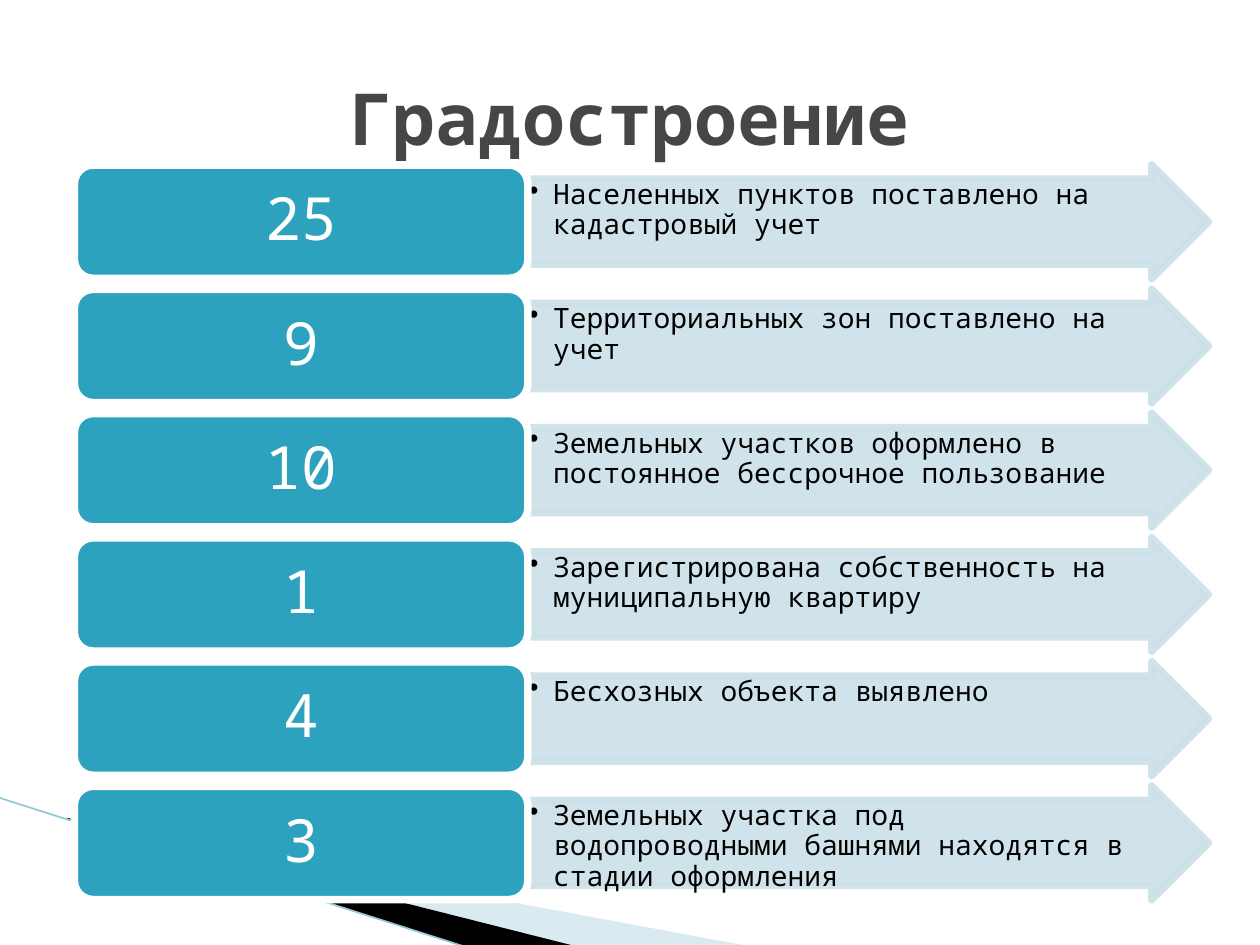
from lxml import etree
from pptx import Presentation
from pptx.dml.color import RGBColor
from pptx.enum.shapes import MSO_CONNECTOR, MSO_SHAPE
from pptx.enum.text import MSO_ANCHOR, PP_ALIGN
from pptx.oxml.ns import qn
from pptx.util import Inches, Pt

ARROW = MSO_SHAPE.RIGHT_ARROW
CARD = MSO_SHAPE.ROUNDED_RECTANGLE
LINE = MSO_CONNECTOR.STRAIGHT
TOP, MIDDLE = MSO_ANCHOR.TOP, MSO_ANCHOR.MIDDLE
LEFT, CENTER = PP_ALIGN.LEFT, PP_ALIGN.CENTER

COLS, ROWS = 100, 75
FIRST, STEP, HIGH = 13.1, 9.86, 9
FACTS = [
    ("25", "Населенных пунктов поставлено на кадастровый учет"),
    ("9", "Территориальных зон поставлено на учет"),
    ("10", "Земельных участков оформлено в постоянное бессрочное пользование"),
    ("1", "Зарегистрирована собственность на муниципальную квартиру"),
    ("4", "Бесхозных объекта выявлено"),
    ("3", "Земельных участка под водопроводными башнями находятся в стадии оформления"),
]


def rgb(code):
    return RGBColor.from_string(code)


def fade(parent, share):
    """Make the solid fill inside a shape's or line's XML opaque by a percentage."""
    color = parent.find(qn("a:solidFill"))[0]
    etree.SubElement(color, qn("a:alpha"), val=str(share * 1000))


class Board:
    """Style and current slide; lengths are columns and rows of the grid."""

    font = "Noto Sans Mono"
    teal, pale, white = "2DA2BF", "CDE0E8", "FFFFFF"
    black, gray = "000000", "464646"
    edge = 4.33

    def __init__(self, deck):
        self.slide = deck.slides.add_slide(deck.slide_layouts[6])
        self.shapes = self.slide.shapes
        self.col = deck.slide_width / COLS
        self.row = deck.slide_height / ROWS

    def spot(self, x, y):
        return round(x * self.col), round(y * self.row)

    def label(self, shape, text, size, color, align=CENTER, anchor=MIDDLE, bold=False):
        frame = shape.text_frame
        frame.text = text
        frame.word_wrap = True
        frame.vertical_anchor = anchor
        para = frame.paragraphs[0]
        para.alignment = align
        font = para.runs[0].font
        font.name, font.size, font.bold = self.font, Pt(size), bold
        font.color.rgb = rgb(color)
        return para

    def inset(self, shape, left, top, right, bottom):
        frame = shape.text_frame
        frame.margin_left, frame.margin_top = Inches(left), Inches(top)
        frame.margin_right, frame.margin_bottom = Inches(right), Inches(bottom)

    def title(self, text, x, y, w, h):
        box = self.shapes.add_textbox(*self.spot(x, y), *self.spot(w, h))
        self.label(box, text, 41, self.gray, bold=True)

    def block(self, kind, x, y, w, h, fill, edge):
        shape = self.shapes.add_shape(kind, *self.spot(x, y), *self.spot(w, h))
        shape.shadow.inherit = False
        shape.fill.solid()
        shape.fill.fore_color.rgb = rgb(fill)
        shape.line.color.rgb = rgb(edge)
        shape.line.width = Pt(self.edge)
        return shape

    def arrow(self, text, x, y, w, h):
        shape = self.block(ARROW, x, y, w, h, self.pale, self.pale)
        shape.adjustments[0] = 0.75
        body = shape.element.spPr
        rim = body.find(qn("a:ln"))
        fade(body, 90)
        fade(rim, 90)
        etree.SubElement(rim, qn("a:round"))
        self.inset(shape, 0.01, 0.01, 0.23, 0.01)
        para = self.label(shape, text, 16, self.black, LEFT, TOP)
        para.line_spacing = 0.9
        props = para._p.get_or_add_pPr()
        props.set("marL", str(Inches(0.19)))
        props.set("indent", str(-Inches(0.19)))
        etree.SubElement(props, qn("a:buChar"), char="•")

    def card(self, text, x, y, w, h):
        shape = self.block(CARD, x, y, w, h, self.teal, self.white)
        self.inset(shape, 0.14, 0.07, 0.14, 0.07)
        self.label(shape, text, 34, self.white).line_spacing = 0.9

    def wedge(self, points, fill, share=100):
        start, *rest = [self.spot(*point) for point in points]
        pen = self.shapes.build_freeform(*start)
        pen.add_line_segments(rest)
        shape = pen.convert_to_shape()
        shape.shadow.inherit = False
        shape.fill.solid()
        shape.fill.fore_color.rgb = rgb(fill)
        fade(shape.element.spPr, share)
        shape.line.fill.background()

    def stroke(self, start, end, color, width):
        line = self.shapes.add_connector(LINE, *self.spot(*start), *self.spot(*end))
        line.line.color.rgb = rgb(color)
        line.line.width = Pt(width)
        etree.SubElement(line.element.spPr, qn("a:effectLst"))


def main():
    deck = Presentation()
    deck.slide_width, deck.slide_height = Inches(10), Inches(7.5)
    board = Board(deck)
    board.wedge([(5.5, 65.1), (59.5, 75.1), (45.6, 75.1), (5.5, 65)], "A0CBDC", 40)
    board.wedge([(5.3, 64.9), (45.7, 75.1), (37.2, 75.2), (5.4, 65)], board.black)
    board.stroke((-0.1, 63.3), (37.1, 75.2), "97C5D8", 0.95)
    board.title("Градостроение", 5, 3, 90, 12.5)
    for i, (count, fact) in enumerate(FACTS):
        y = FIRST + i * STEP
        board.arrow(fact, 41.9, y, 54, HIGH)
        board.card(count, 5.9, y, 36, HIGH)
    deck.save("out.pptx")


if __name__ == "__main__":
    main()
